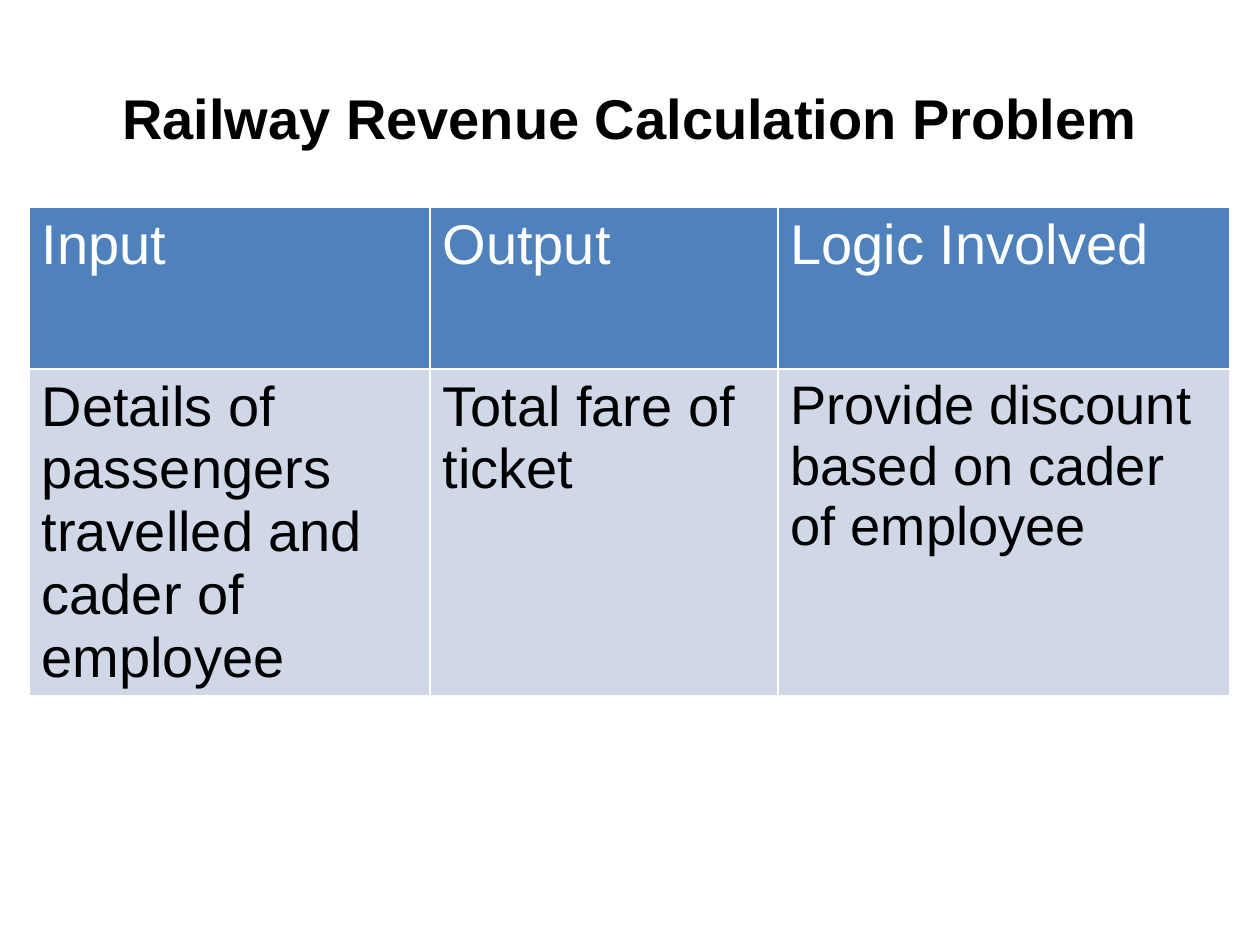
from pptx import Presentation
from pptx.dml.color import RGBColor
from pptx.enum.text import MSO_ANCHOR, MSO_AUTO_SIZE, PP_ALIGN
from pptx.oxml import parse_xml
from pptx.oxml.ns import nsdecls
from pptx.util import Emu, Pt

SCALE = 914400 / 126


def px(size):
    return Emu(round(size * SCALE))


def tint(code):
    return RGBColor.from_string(code)


class Deck:
    font = "Arial"
    black = "000000"
    white = "FFFFFF"
    blue = "4F81BD"
    pale = "D0D8E8"

    def __init__(self, wide, high):
        self.show = Presentation()
        self.show.slide_width = px(wide)
        self.show.slide_height = px(high)
        self.slide = self.show.slides.add_slide(self.show.slide_layouts[5])

    def text(self, para, words, size, color, bold=False):
        run = para.add_run()
        run.text = words
        run.font.name = self.font
        run.font.size = Pt(size)
        run.font.bold = bold
        run.font.color.rgb = tint(color)

    def title(self, words, left, top, wide, high):
        shape = self.slide.shapes.title
        shape.left, shape.top = px(left), px(top)
        shape.width, shape.height = px(wide), px(high)
        frame = shape.text_frame
        frame.word_wrap = True
        frame.auto_size = MSO_AUTO_SIZE.NONE
        frame.vertical_anchor = MSO_ANCHOR.MIDDLE
        frame.margin_left = frame.margin_right = 0
        frame.margin_top = frame.margin_bottom = 0
        para = frame.paragraphs[0]
        para.alignment = PP_ALIGN.CENTER
        self.text(para, words, 32, self.black, True)

    def border(self, cell):
        props = cell._tc.get_or_add_tcPr()
        for side in "LRTB":
            props.append(parse_xml(
                f'<a:ln{side} {nsdecls("a")} w="{Pt(1)}"><a:solidFill>'
                f'<a:srgbClr val="{self.white}"/></a:solidFill></a:ln{side}>'))

    def cell(self, cell, words, size, color, fill):
        self.border(cell)
        cell.fill.solid()
        cell.fill.fore_color.rgb = tint(fill)
        self.text(cell.text_frame.paragraphs[0], words, size, color)

    def table(self, left, top, cols, rows, data):
        grid = self.slide.shapes.add_table(
            len(rows), len(cols), px(left), px(top),
            px(sum(cols)), px(sum(rows))).table
        for col, wide in zip(grid.columns, cols):
            col.width = px(wide)
        for row, high in zip(grid.rows, rows):
            row.height = px(high)
        looks = [(self.white, self.blue), (self.black, self.pale)]
        for row, line, (color, fill) in zip(grid.rows, data, looks):
            for cell, (words, size) in zip(row.cells, line):
                self.cell(cell, words, size, color, fill)

    def save(self):
        self.show.save("out.pptx")


def main():
    deck = Deck(1260, 945)
    deck.title("Railway Revenue Calculation Problem", 63, 38, 1134, 158)
    deck.table(29, 207, [401, 348, 452], [162, 326], [
        [("Input", 32), ("Output", 32), ("Logic Involved", 32)],
        [("Details of passengers travelled and cader of employee", 32),
         ("Total fare of ticket", 32),
         ("Provide discount based on cader of employee", 31)],
    ])
    deck.save()


if __name__ == "__main__":
    main()
